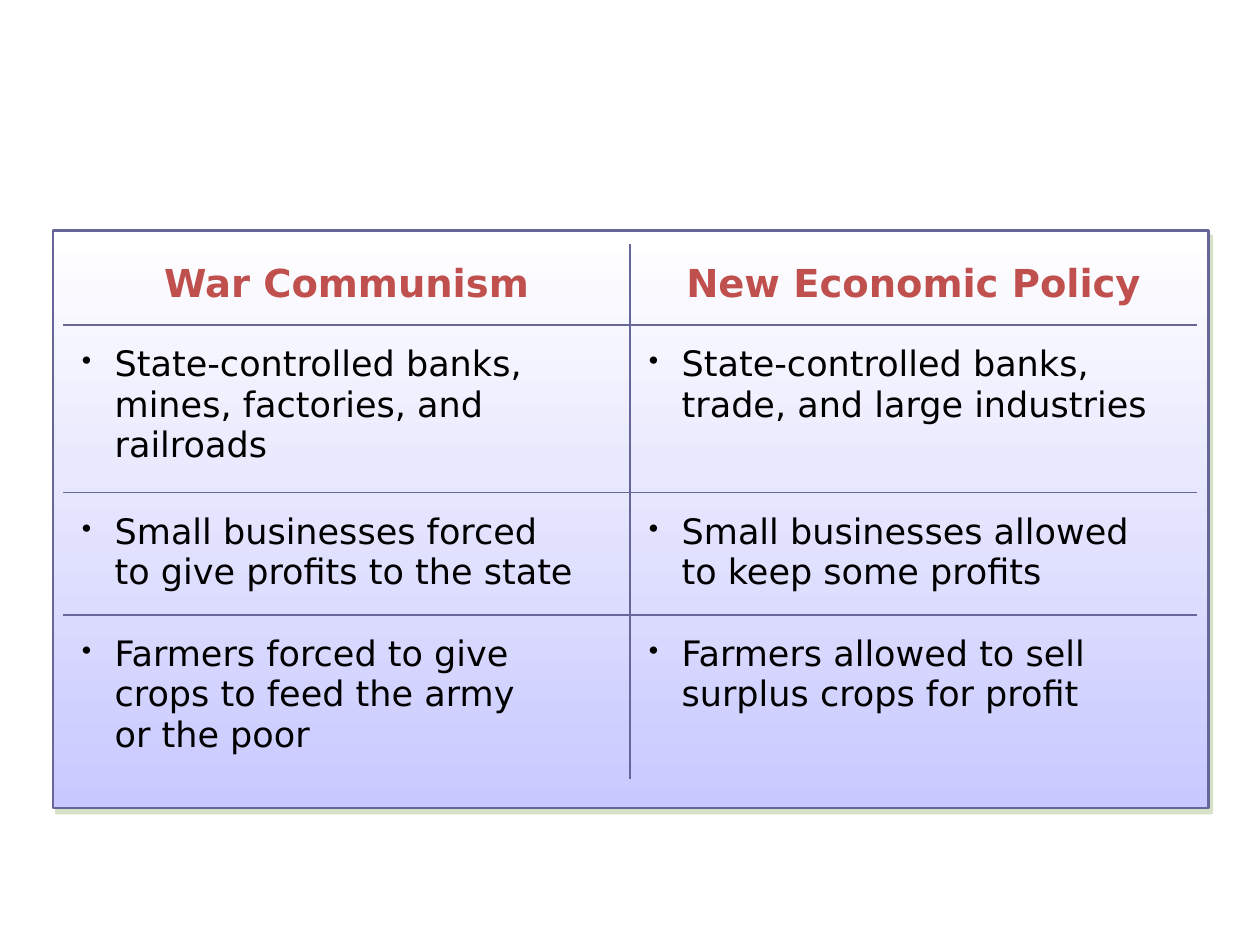
import pptx
import pptx.dml.color
import pptx.enum.shapes
import pptx.enum.text
import pptx.oxml
import pptx.oxml.ns
import pptx.util
from dataclasses import dataclass

WIDTH = pptx.util.Inches(10)
HEIGHT = pptx.util.Inches(7.5)
COLUMN_SHARES = [0.45, 0.45]
TABLE_LEFT = 0.05
HEADINGS = [["War Communism", "New Economic Policy"]]
COMPARISONS = [
    [
        "State-controlled banks, mines, factories, and railroads",
        "State-controlled banks, trade, and large industries",
    ],
    [
        "Small businesses forced \nto give profits to the state",
        "Small businesses allowed \nto keep some profits",
    ],
    [
        "Farmers forced to give crops to feed the army \nor the poor",
        "Farmers allowed to sell surplus crops for profit",
    ],
]


@dataclass(frozen=True)
class Theme:
    font: str = "DejaVu Sans"
    heading_size: int = 22
    body_size: int = 20
    heading: str = "C0504D"
    body: str = "000000"
    line: str = "666699"
    panel_top: str = "FFFFFF"
    panel_bottom: str = "C9C9FF"
    shadow: str = "ADC793"


THEME = Theme()


def color(value):
    return pptx.dml.color.RGBColor.from_string(value)


def across(share):
    return round(WIDTH * share)


def down(share):
    return round(HEIGHT * share)


def element(markup):
    namespace = pptx.oxml.ns.nsdecls("a")
    return pptx.oxml.parse_xml(markup.replace(" ", f" {namespace} ", 1))


def add_panel(slide, left, top, width, height):
    panel = slide.shapes.add_shape(
        pptx.enum.shapes.MSO_SHAPE.RECTANGLE,
        across(left), down(top), across(width), down(height),
    )
    panel.fill.gradient()
    panel.fill.gradient_angle = 270
    stops = panel.fill.gradient_stops
    for stop, value, position in zip(stops, (THEME.panel_top, THEME.panel_bottom), (0, 1)):
        stop.color.rgb = color(value)
        stop.position = position
    panel.line.color.rgb = color(THEME.line)
    panel.line.width = pptx.util.Pt(1.5)
    panel.shadow.inherit = False
    effects = panel._element.spPr.find(pptx.oxml.ns.qn("a:effectLst"))
    distance = pptx.util.Pt(3.6)
    effects.append(element(
        f'<a:outerShdw dist="{distance}" dir="{56 * 60000}" algn="ctr" rotWithShape="0">'
        f'<a:srgbClr val="{THEME.shadow}"><a:alpha val="50000"/></a:srgbClr></a:outerShdw>'
    ))


def set_borders(cell, visible):
    properties = cell._tc.get_or_add_tcPr()
    solid = f'<a:solidFill><a:srgbClr val="{THEME.line}"/></a:solidFill>'
    for index, side in enumerate("LRTB"):
        paint = solid if side in visible else "<a:noFill/>"
        width = pptx.util.Pt(1)
        properties.insert(index, element(f'<a:ln{side} w="{width}">{paint}</a:ln{side}>'))


def add_bullet(paragraph):
    properties = paragraph._p.get_or_add_pPr()
    indent = pptx.util.Inches(0.26)
    properties.set("marL", str(indent))
    properties.set("indent", str(-indent))
    properties.insert(0, element('<a:buSzPct val="80000"/>'))
    properties.insert(1, element('<a:buChar char="•"/>'))


def style_heading(cell):
    cell.vertical_anchor = pptx.enum.text.MSO_ANCHOR.MIDDLE
    paragraph = cell.text_frame.paragraphs[0]
    paragraph.alignment = pptx.enum.text.PP_ALIGN.CENTER
    paragraph.font.size = pptx.util.Pt(THEME.heading_size)
    paragraph.font.bold = True
    paragraph.font.color.rgb = color(THEME.heading)


def style_comparison(cell):
    margin = pptx.util.Inches(0.15)
    cell.margin_left = cell.margin_right = margin
    cell.margin_top = cell.margin_bottom = margin
    paragraph = cell.text_frame.paragraphs[0]
    add_bullet(paragraph)
    paragraph.font.size = pptx.util.Pt(THEME.body_size)
    paragraph.font.color.rgb = color(THEME.body)


def add_text_table(slide, top, row_heights, content, style_cell, top_rule):
    heights = [pptx.util.Inches(height) for height in row_heights]
    frame = slide.shapes.add_table(
        len(content), len(COLUMN_SHARES), across(TABLE_LEFT), pptx.util.Inches(top),
        across(sum(COLUMN_SHARES)), sum(heights),
    )
    table = frame.table
    table.first_row = False
    table.horz_banding = False
    for column, share in zip(table.columns, COLUMN_SHARES):
        column.width = across(share)
    for row_index, (height, texts) in enumerate(zip(heights, content)):
        table.rows[row_index].height = height
        for column_index, text in enumerate(texts):
            cell = table.cell(row_index, column_index)
            paragraph = cell.text_frame.paragraphs[0]
            paragraph.text = text
            paragraph.font.name = THEME.font
            style_cell(cell)
            cell.fill.background()
            visible = "R" if column_index == 0 else "L"
            if top_rule:
                visible += "T"
            if row_index < len(content) - 1:
                visible += "B"
            set_borders(cell, visible)


def main():
    presentation = pptx.Presentation()
    presentation.slide_width = WIDTH
    presentation.slide_height = HEIGHT
    slide = presentation.slides.add_slide(presentation.slide_layouts[6])
    add_panel(slide, 0.042, 0.244, 0.917, 0.611)
    add_text_table(slide, 2.58, [1.33, 0.97, 1.3], COMPARISONS, style_comparison, True)
    add_text_table(slide, 1.94, [0.63], HEADINGS, style_heading, False)
    presentation.save("out.pptx")


if __name__ == "__main__":
    main()
